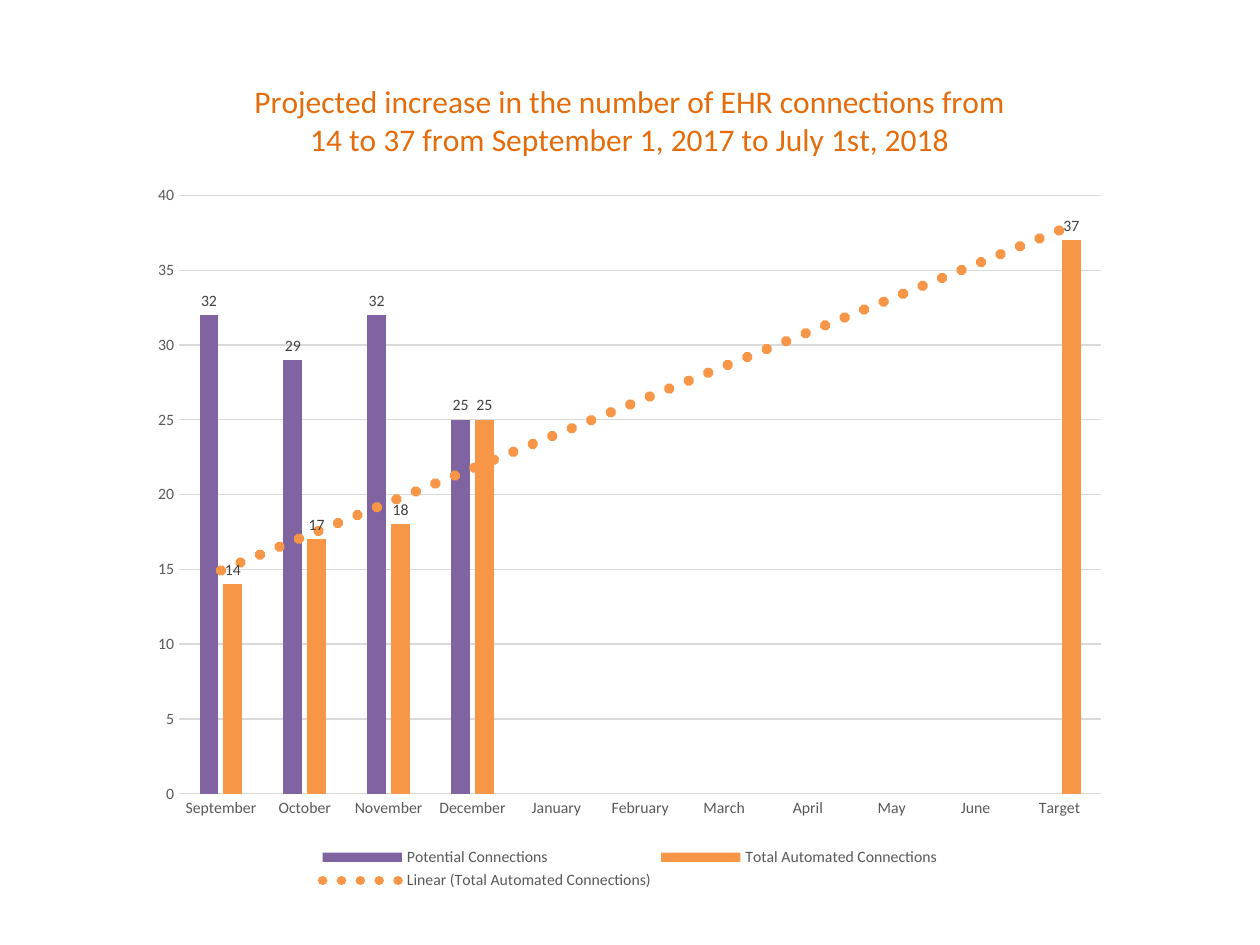
from lxml import etree
from pptx import Presentation
from pptx import util as u
from pptx.chart import data as cd
from pptx.dml import color
from pptx.enum import chart as ce
from pptx.oxml import ns

MONTHS = ["September", "October", "November", "December", "January", "February",
          "March", "April", "May", "June", "Target"]
POTENTIAL = [32, 29, 32, 25] + [None] * 7
AUTOMATED = [14, 17, 18, 25] + [None] * 6 + [37]
TITLE = ("Projected increase in the number of EHR connections from "
         "14 to 37 from September 1, 2017 to July 1st, 2018")
PURPLE, ORANGE, GRID = "8064A2", "F79646", "D9D9D9"

TRENDLINE = """<c:trendline {decls}>
  <c:spPr><a:ln w="{width}" cap="rnd"><a:solidFill><a:srgbClr val="{hex}"/></a:solidFill>
  <a:prstDash val="sysDot"/></a:ln></c:spPr>
  <c:trendlineType val="linear"/><c:dispRSqr val="0"/><c:dispEq val="0"/>
</c:trendline>"""


def rgb(value):
    return color.RGBColor.from_string(value)


def set_font(f, size=9, hex="595959", name="Calibri"):
    f.size, f.name, f.bold = u.Pt(size), name, False
    f.color.rgb = rgb(hex)


def set_line(line, hex=GRID, width=0.75):
    line.color.rgb = rgb(hex)
    line.width = u.Pt(width)


class Deck:
    def __init__(self, width, height):
        self.prs = Presentation()
        self.prs.slide_width, self.prs.slide_height = u.Cm(width), u.Cm(height)
        self.s = self.prs.slides.add_slide(self.prs.slide_layouts[6])

    def column_chart(self, x, y, w, h, cats, series):
        data = cd.CategoryChartData()
        data.categories = cats
        for name, values, _ in series:
            data.add_series(name, values)
        chart = self.s.shapes.add_chart(
            ce.XL_CHART_TYPE.COLUMN_CLUSTERED,
            u.Cm(x), u.Cm(y), u.Cm(w), u.Cm(h), data).chart
        set_font(chart.font, 10, "000000")
        plot = chart.plots[0]
        plot.gap_width, plot.overlap, plot.vary_by_categories = 219, -27, False
        for ser, (_, _, hex) in zip(plot.series, series):
            ser.format.fill.solid()
            ser.format.fill.fore_color.rgb = rgb(hex)
            ser.invert_if_negative = False
            labels = ser.data_labels
            labels.show_value = True
            labels.position = ce.XL_LABEL_POSITION.OUTSIDE_END
            set_font(labels.font, hex="404040")
        return chart

    def title(self, chart, content, size, hex):
        chart.has_title = True
        p = chart.chart_title.text_frame.paragraphs[0]
        r = p.add_run()
        r.text = content
        set_font(r.font, size, hex)
        chart.chart_title.include_in_layout = False

    def axes(self, chart, top, step):
        for axis in (chart.category_axis, chart.value_axis):
            axis.major_tick_mark = axis.minor_tick_mark = ce.XL_TICK_MARK.NONE
            set_font(axis.tick_labels.font)
        set_line(chart.category_axis.format.line)
        axis = chart.value_axis
        axis.minimum_scale, axis.maximum_scale, axis.major_unit = 0, top, step
        axis.format.line.fill.background()
        set_line(axis.major_gridlines.format.line)

    def legend(self, chart):
        chart.has_legend = True
        chart.legend.position = ce.XL_LEGEND_POSITION.BOTTOM
        chart.legend.include_in_layout = False
        set_font(chart.legend.font)

    def trendline(self, ser, hex, width):
        xml = TRENDLINE.format(decls=ns.nsdecls("c", "a"), hex=hex, width=u.Pt(width))
        ser._element.find(ns.qn("c:cat")).addprevious(etree.fromstring(xml))


def main():
    deck = Deck(25.4, 19.05)
    chart = deck.column_chart(2.79, 1.02, 19.81, 17.02, MONTHS, [
        ("Potential Connections", POTENTIAL, PURPLE),
        ("Total Automated Connections", AUTOMATED, ORANGE)])
    deck.title(chart, TITLE, 18, "E46C0A")
    deck.axes(chart, 40, 5)
    deck.legend(chart)
    deck.trendline(chart.plots[0].series[1], ORANGE, 6)
    deck.prs.save("out.pptx")


if __name__ == "__main__":
    main()
